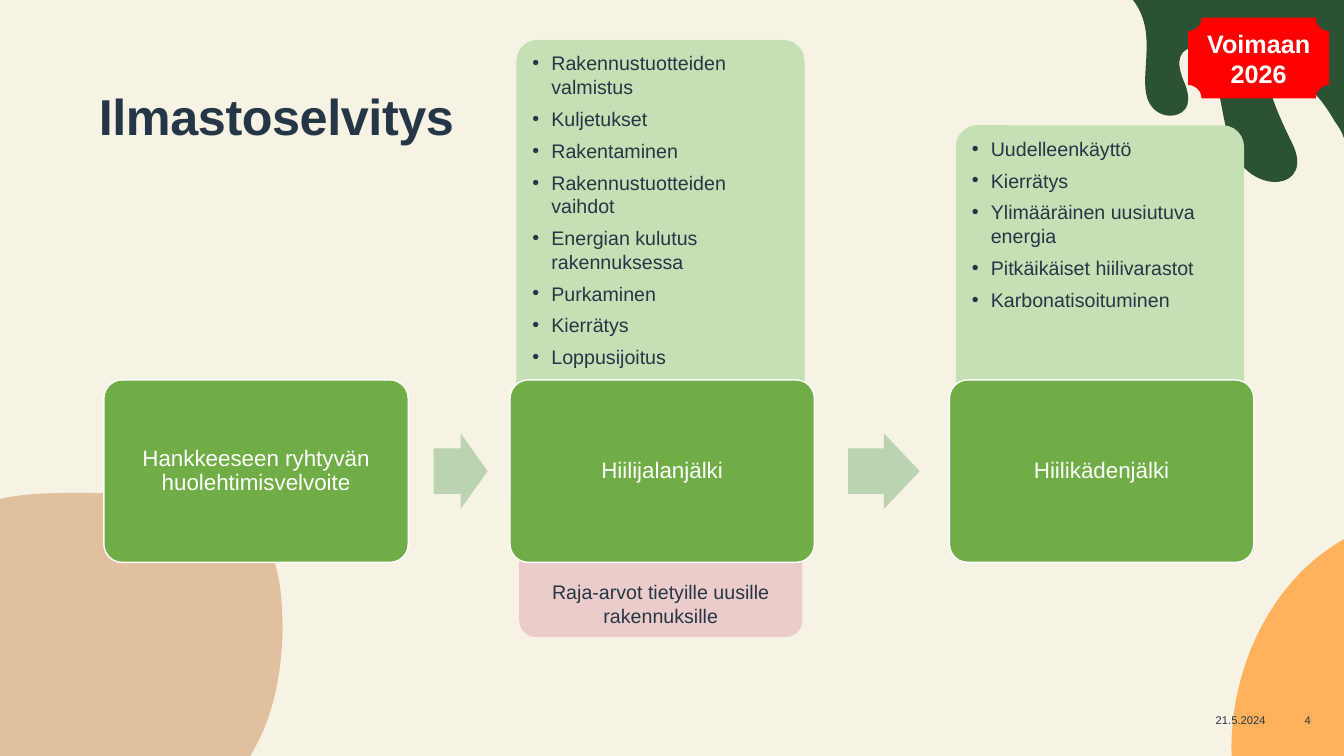
"""Build the Ilmastoselvitys slide: three process steps with detail panels."""
from dataclasses import dataclass

from lxml import etree
from pptx import Presentation
from pptx.dml.color import RGBColor
from pptx.enum import shapes, text
from pptx.oxml.ns import qn
from pptx.util import Pt

TITLE = "Ilmastoselvitys"
BADGE = "Voimaan 2026"
LIMITS = "Raja-arvot tietyille uusille rakennuksille"
STEPS = [
    {"name": "Hankkeeseen ryhtyvän huolehtimisvelvoite", "left": 74.2},
    {"name": "Hiilijalanjälki", "left": 364.3, "panel_top": 28.5, "limits": LIMITS, "items": [
        "Rakennustuotteiden valmistus", "Kuljetukset", "Rakentaminen",
        "Rakennustuotteiden vaihdot", "Energian kulutus rakennuksessa",
        "Purkaminen", "Kierrätys", "Loppusijoitus"]},
    {"name": "Hiilikädenjälki", "left": 678.2, "panel_top": 89.5, "items": [
        "Uudelleenkäyttö", "Kierrätys", "Ylimääräinen uusiutuva energia",
        "Pitkäikäiset hiilivarastot", "Karbonatisoituminen"]},
]
FOOTER = [("21.5.2024", 857.1, 58.3), ("4", 917.3, 33.8)]


@dataclass(frozen=True)
class Theme:
    """Colours, font and type sizes."""
    font: str = "Arial"
    page: str = "F6F3E5"
    ink: str = "253746"
    white: str = "FFFFFF"
    orange: str = "FFB25B"
    tan: str = "E0C09F"
    forest: str = "2C5234"
    step: str = "70AD47"
    panel: str = "C5E0B4"
    arrow: str = "BBD3B1"
    limits: str = "E1A7B0"
    badge: str = "FF0000"
    title_size: int = 36
    badge_size: int = 18
    step_size: int = 16
    body_size: int = 14
    footer_size: int = 8


T = Theme()
BLOBS = [
    (T.orange, (960, 385.2), [
        (946.8, 392.4, 933.8, 403.2, 923, 415.4),
        (902.2, 439.2, 889.2, 468.7, 883.4, 497.5),
        (880.6, 511.2, 879.1, 526.3, 879.8, 540),
        (960, 540)]),
    (T.tan, (178.6, 540), [
        (190.8, 520.6, 197.3, 498.2, 200.2, 474.5),
        (201.6, 462.2, 202.3, 450.7, 201.6, 439.2),
        (200.9, 417.6, 198, 393.1, 180.7, 375.8),
        (167, 362.2, 146.9, 357.8, 128.2, 355.7),
        (104.4, 352.8, 80.6, 352.1, 56.9, 352.1),
        (38.9, 352.1, 18.7, 352.1, 0, 356.4),
        (0, 540)]),
    (T.forest, (960, 98.6), [
        (958.6, 94.3, 956.4, 90.7, 953.3, 86.4),
        (945.4, 72.7, 935.3, 59.8, 920.9, 53.3),
        (915.1, 50.4, 912.2, 46.8, 907.2, 51.1),
        (900.7, 56.9, 918.7, 93.6, 923, 102.2),
        (939.6, 135.4, 895.7, 140.4, 881.3, 108.7),
        (870.5, 82.8, 874.1, 58.3, 859, 39.6),
        (856.8, 37.4, 853.9, 34.6, 850.3, 34.6),
        (846, 34.6, 842.4, 39.6, 842.4, 44.6),
        (842.4, 49.7, 844.6, 56.2, 846.7, 60.5),
        (848.2, 64.8, 849.6, 69.8, 848.2, 74.9),
        (845.3, 83.5, 833, 85, 825.8, 79.2),
        (807.1, 64.8, 830.9, 27.4, 809.3, 0),
        (960, 0)]),
]
STEP_TOP, STEP_W, STEP_H = 271.4, 217.4, 130.3
PANEL_W, PANEL_BOTTOM = 205.9, 372.6
LIMITS_W, LIMITS_TOP, LIMITS_BOTTOM = 202.3, 294.5, 455.1
ARROW_H = 54


def paint(sp, fill, line=None, alpha=None):
    """Set fill, outline and transparency, without a shadow."""
    sp.shadow.inherit = False
    sp.fill.solid()
    sp.fill.fore_color.rgb = RGBColor.from_string(fill)
    if alpha:
        clr = sp.fill._xPr.find(".//" + qn("a:srgbClr"))
        etree.SubElement(clr, qn("a:alpha")).set("val", str(alpha * 1000))
    if line:
        sp.line.color.rgb = RGBColor.from_string(line)
        sp.line.width = Pt(1)
    else:
        sp.line.fill.background()


def add_box(slide, kind, box, fill, adjust=(), **look):
    """Add a preset shape at a box given in points."""
    sp = slide.shapes.add_shape(kind, *map(Pt, box))
    for i, value in enumerate(adjust):
        sp.adjustments[i] = value
    paint(sp, fill, **look)
    return sp


def write(sp, lines, size, color=T.ink, bold=False, align="CENTER", anchor="MIDDLE",
          margins=(7.2, 3.6), spacing=None, after=None, bullet=False, tracking=None):
    """Write lines of text into a shape in one format."""
    tf = sp.text_frame
    tf.word_wrap = True
    tf.auto_size = text.MSO_AUTO_SIZE.NONE
    tf.vertical_anchor = text.MSO_ANCHOR[anchor]
    tf.margin_left = tf.margin_right = Pt(margins[0])
    tf.margin_top = tf.margin_bottom = Pt(margins[1])
    for i, line in enumerate(lines):
        p = tf.add_paragraph() if i else tf.paragraphs[0]
        if bullet:
            pPr = p._p.get_or_add_pPr()
            pPr.set("marL", str(Pt(13.5)))
            pPr.set("indent", str(-Pt(13.5)))
            etree.SubElement(pPr, qn("a:buFont")).set("typeface", T.font)
            etree.SubElement(pPr, qn("a:buChar")).set("char", "•")
        p.alignment = text.PP_ALIGN[align]
        if spacing:
            p.line_spacing = spacing
        if after:
            p.space_after = Pt(after)
        r = p.add_run()
        r.text = line
        r.font.name, r.font.size, r.font.bold = T.font, Pt(size), bold
        r.font.color.rgb = RGBColor.from_string(color)
        if tracking:
            r._r.get_or_add_rPr().set("spc", str(tracking))


def add_blob(slide, fill, start, segments):
    """Draw a closed outline from cubic curves and straight segments."""
    builder = slide.shapes.build_freeform(*map(Pt, start))
    builder.add_line_segments([tuple(map(Pt, seg[-2:])) for seg in segments], close=True)
    sp = builder.convert_to_shape()
    for line, seg in zip(list(sp._element.iter(qn("a:lnTo"))), segments):
        if len(seg) == 6:
            line.tag = qn("a:cubicBezTo")
            line.clear()
            for x, y in zip(seg[::2], seg[1::2]):
                pt = etree.SubElement(line, qn("a:pt"))
                pt.set("x", str(Pt(x) - sp.left))
                pt.set("y", str(Pt(y) - sp.top))
    paint(sp, fill)


def add_details(slide, step):
    """Add the panels that stand behind a step."""
    rounded = shapes.MSO_SHAPE.ROUNDED_RECTANGLE
    center = step["left"] + STEP_W / 2
    if "limits" in step:
        box = (center - LIMITS_W / 2 - 1, LIMITS_TOP, LIMITS_W, LIMITS_BOTTOM - LIMITS_TOP)
        sp = add_box(slide, rounded, box, T.limits, [0.074], alpha=50)
        write(sp, [step["limits"]], T.body_size, anchor="BOTTOM")
    if "items" in step:
        top = step["panel_top"]
        box = (center - PANEL_W / 2 - 1.2, top, PANEL_W, PANEL_BOTTOM - top)
        sp = add_box(slide, rounded, box, T.panel, [0.074])
        write(sp, step["items"], T.body_size, align="LEFT", anchor="TOP", after=6, bullet=True)


def main():
    """Assemble and save the slide."""
    prs = Presentation()
    prs.slide_width, prs.slide_height = Pt(960), Pt(540)
    slide = prs.slides.add_slide(prs.slide_layouts[5])
    slide.background.fill.solid()
    slide.background.fill.fore_color.rgb = RGBColor.from_string(T.page)
    for blob in BLOBS:
        add_blob(slide, *blob)

    title = slide.shapes.title
    title.left, title.top, title.width, title.height = map(Pt, (70.6, 65.5, 819.4, 94.3))
    write(title, [TITLE], T.title_size, bold=True, align="LEFT", anchor="TOP",
          margins=(0, 0), spacing=0.9, tracking=-30)

    for step in reversed(STEPS):
        add_details(slide, step)
    for step in STEPS:
        sp = add_box(slide, shapes.MSO_SHAPE.ROUNDED_RECTANGLE,
                     (step["left"], STEP_TOP, STEP_W, STEP_H), T.step, [0.1], line=T.white)
        write(sp, [step["name"]], T.step_size, T.white, margins=(5, 5), spacing=0.9)
    for step, following in zip(STEPS, STEPS[1:]):
        right = step["left"] + STEP_W
        gap = following["left"] - right
        box = (right + 0.25 * gap, STEP_TOP + (STEP_H - ARROW_H) / 2, 0.53 * gap, ARROW_H)
        add_box(slide, shapes.MSO_SHAPE.RIGHT_ARROW, box, T.arrow, [0.6, 0.5])

    for label, left, width in FOOTER:
        sp = slide.shapes.add_textbox(*map(Pt, (left, 506.2, width, 15.8)))
        write(sp, [label], T.footer_size, margins=(0, 0))
    badge = add_box(slide, shapes.MSO_SHAPE.PLAQUE, (848.7, 12.7, 100.8, 57.6), T.badge)
    write(badge, [BADGE], T.badge_size, T.white, bold=True, margins=(3.6, 3.6))
    prs.save("out.pptx")


if __name__ == "__main__":
    main()
